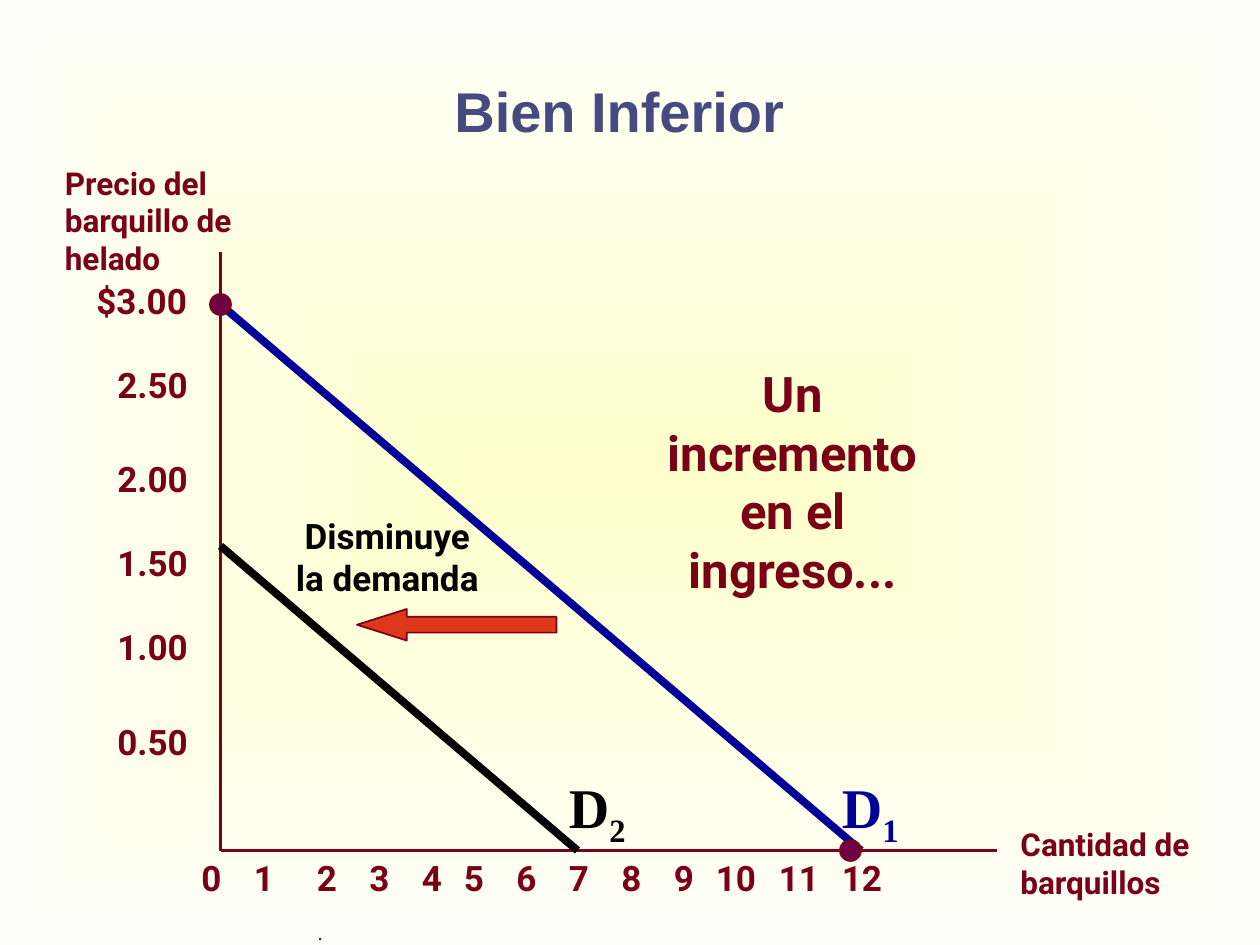
from dataclasses import dataclass

import pptx
import pptx.dml.color
import pptx.enum.shapes
import pptx.enum.text
import pptx.oxml
import pptx.oxml.ns
import pptx.oxml.xmlchemy
import pptx.slide
import pptx.util

PX = 7620
ALIGN = pptx.enum.text.PP_ALIGN
ANCHOR = pptx.enum.text.MSO_ANCHOR
KIND = pptx.enum.shapes.MSO_SHAPE


@dataclass(frozen=True)
class Theme:
    wine: str = "790015"
    plum: str = "6E0043"
    navy: str = "000099"
    black: str = "000000"
    slate: str = "474A81"
    red: str = "DE381C"
    glow: str = "FFFFCC"
    edge: str = "FFFFFA"
    sans: str = "Roboto"
    serif: str = "Times New Roman"
    head: str = "Arial"
    tiny: int = 12
    small: int = 18
    body: int = 20
    big: int = 28
    huge: int = 32


THEME = Theme()


@dataclass(frozen=True)
class Label:
    text: str
    left: int
    top: int
    width: int
    height: int
    size: int = THEME.body
    color: str = THEME.wine
    font: str = THEME.sans
    bold: bool = True
    align: ALIGN = ALIGN.LEFT
    anchor: ANCHOR = ANCHOR.TOP
    pad: tuple[int, int] = (12, 6)
    wrap: bool = True
    sub: str = ""


@dataclass(frozen=True)
class Line:
    start: tuple[int, int]
    end: tuple[int, int]
    color: str
    weight: float


@dataclass(frozen=True)
class Figure:
    kind: KIND
    left: int
    top: int
    width: int
    height: int
    fill: str
    adjust: tuple[float, ...] = ()


def px(count: int) -> pptx.util.Emu:
    return pptx.util.Emu(count * PX)


def rgb(code: str) -> pptx.dml.color.RGBColor:
    return pptx.dml.color.RGBColor.from_string(code)


def paint_back(slide: pptx.slide.Slide) -> None:
    fill = slide.background.fill
    fill.gradient()
    for stop, code in zip(fill.gradient_stops, (THEME.glow, THEME.edge)):
        stop.color.rgb = rgb(code)
    name = pptx.oxml.ns.qn
    grad = slide.element.find(".//" + name("a:gradFill"))
    shade = pptx.oxml.parse_xml(
        f'<a:path {pptx.oxml.ns.nsdecls("a")} path="shape">'
        '<a:fillToRect l="50000" t="50000" r="50000" b="50000"/></a:path>'
    )
    grad.replace(grad.find(name("a:lin")), shade)


def draw_label(slide: pptx.slide.Slide, label: Label) -> None:
    box = slide.shapes.add_textbox(
        px(label.left), px(label.top), px(label.width), px(label.height)
    )
    frame = box.text_frame
    frame.word_wrap = label.wrap
    frame.vertical_anchor = label.anchor
    frame.margin_left = frame.margin_right = px(label.pad[0])
    frame.margin_top = frame.margin_bottom = px(label.pad[1])
    para = frame.paragraphs[0]
    para.text = label.text
    para.alignment = label.align
    if label.sub:
        run = para.add_run()
        run.text = label.sub
        run.font._element.set("baseline", "-25000")
    for run in para.runs:
        run.font.name = label.font
        run.font.size = pptx.util.Pt(label.size)
        run.font.bold = label.bold
        run.font.color.rgb = rgb(label.color)


def draw_line(slide: pptx.slide.Slide, line: Line) -> None:
    link = slide.shapes.add_connector(
        pptx.enum.shapes.MSO_CONNECTOR.STRAIGHT,
        *map(px, line.start + line.end),
    )
    link.line.color.rgb = rgb(line.color)
    link.line.width = pptx.util.Pt(line.weight)
    props = link._element.spPr
    props.append(pptx.oxml.xmlchemy.OxmlElement("a:effectLst"))


def draw_figure(slide: pptx.slide.Slide, item: Figure) -> None:
    shape = slide.shapes.add_shape(
        item.kind, px(item.left), px(item.top), px(item.width), px(item.height)
    )
    shape.shadow.inherit = False
    shape.fill.solid()
    shape.fill.fore_color.rgb = rgb(item.fill)
    shape.line.color.rgb = rgb(THEME.wine)
    shape.line.width = pptx.util.Pt(1)
    for index, value in enumerate(item.adjust):
        shape.adjustments[index] = value


AXIS_X, AXIS_Y = 210, 810
PRICES = {"2.50": 340, "2.00": 430, "1.50": 510, "1.00": 590, "0.50": 680}
COUNTS = (180, 230, 290, 340, 390, 430, 480, 530, 580, 630, 670, 730, 790)

LINES = [
    Line((AXIS_X, 240), (AXIS_X, AXIS_Y), THEME.wine, 2.25),
    Line((AXIS_X, AXIS_Y), (950, AXIS_Y), THEME.wine, 2.25),
    Line((AXIS_X, 290), (820, AXIS_Y), THEME.navy, 4.5),
    Line((AXIS_X, 520), (550, AXIS_Y), THEME.black, 4.5),
]

FIGURES = [
    Figure(KIND.OVAL, x - 10, y - 10, 20, 20, THEME.plum)
    for x, y in ((810, AXIS_Y), (AXIS_X, 290))
] + [Figure(KIND.LEFT_ARROW, 340, 580, 190, 30, THEME.red, (0.5, 1.58))]

LABELS = [
    Label(".", 0, 840, 610, 60, THEME.tiny, font=THEME.serif, bold=False,
          align=ALIGN.CENTER, anchor=ANCHOR.BOTTOM, pad=(12, 0), wrap=False),
    Label("Bien Inferior", 80, 30, 1020, 150, THEME.huge, THEME.slate,
          THEME.head, align=ALIGN.CENTER, anchor=ANCHOR.MIDDLE),
    Label("$3.00", 80, 260, 120, 52),
    *(Label(text, 100, top, 100, 52) for text, top in PRICES.items()),
    *(Label(str(count), left, AXIS_Y, 70, 52)
      for count, left in enumerate(COUNTS)),
    Label("Precio del barquillo de helado", 50, 150, 200, 120, THEME.small),
    Label("Cantidad de barquillos", 960, 780, 200, 120, THEME.small),
    Label("Disminuye \vla demanda", 262, 490, 194, 80, color=THEME.black,
          align=ALIGN.RIGHT, pad=(0, 0), wrap=False),
    Label("Un incremento en el ingreso...", 600, 340, 310, 236, THEME.big,
          align=ALIGN.CENTER),
    *(Label("D", left, 730, 100, 76, THEME.huge, color, THEME.serif, sub=sub)
      for sub, left, color in (("1", 790, THEME.navy),
                               ("2", 530, THEME.black))),
]


def main() -> None:
    deck = pptx.Presentation()
    deck.slide_width, deck.slide_height = px(1200), px(900)
    slide = deck.slides.add_slide(deck.slide_layouts[6])
    paint_back(slide)
    for line in LINES:
        draw_line(slide, line)
    for item in FIGURES:
        draw_figure(slide, item)
    for label in LABELS:
        draw_label(slide, label)
    deck.save("out.pptx")


if __name__ == "__main__":
    main()
